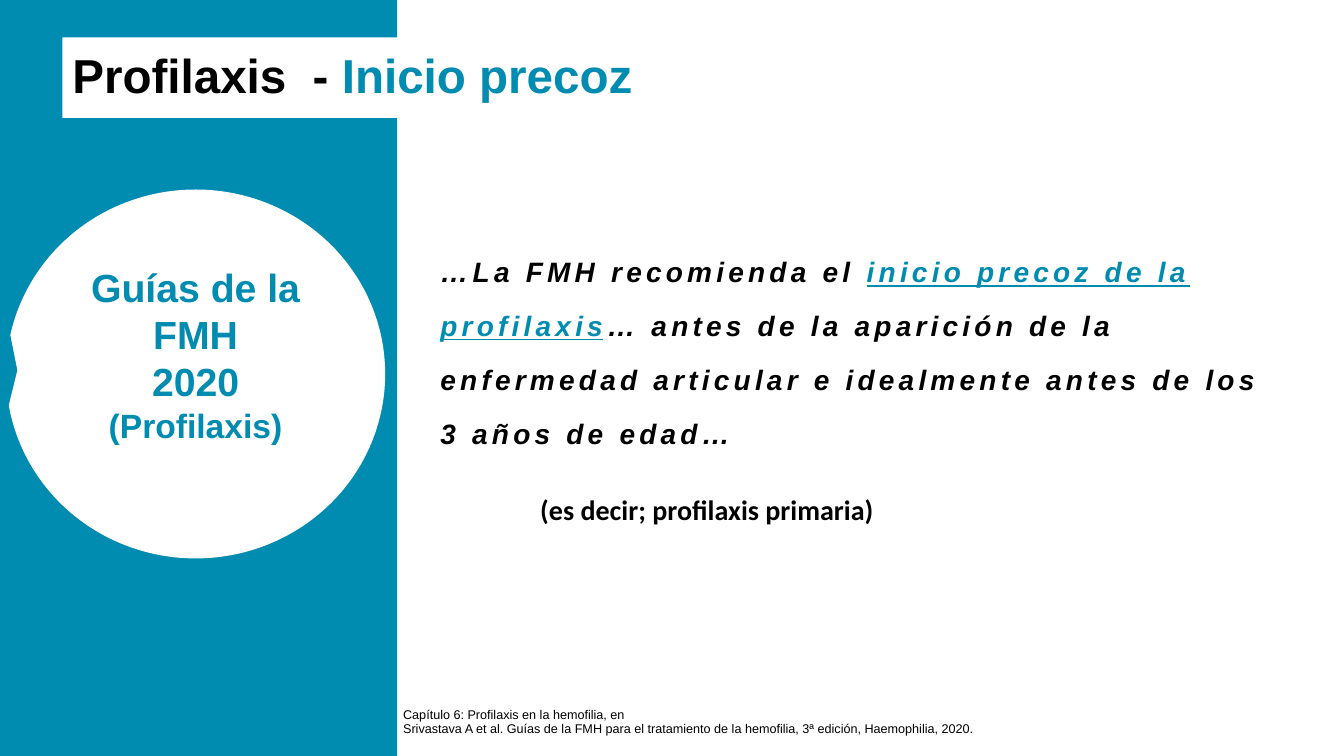
from dataclasses import dataclass

from pptx import Presentation
from pptx import util as u
from pptx.dml.color import RGBColor
from pptx.enum import shapes, text


@dataclass(frozen=True)
class Theme:
    blue: str = "008BB0"
    white: str = "FFFFFF"
    black: str = "000000"
    sans: str = "Arial"
    note_font: str = "Calibri"
    title: int = 34
    heading: int = 28
    subheading: int = 24
    body: int = 20
    source: int = 9


@dataclass(frozen=True)
class Box:
    left: float
    top: float
    width: float
    height: float

    def inner(self, left, top, width, height):
        """Inner box, given in percent of this box."""
        return Box(self.left + self.width * left / 100,
                   self.top + self.height * top / 100,
                   self.width * width / 100, self.height * height / 100)

    def inches(self):
        return [u.Inches(side) for side in
                (self.left, self.top, self.width, self.height)]


THEME = Theme()
SLIDE = Box(0, 0, 13.33, 7.5)


def add_panel(page, box, kind, color):
    panel = page.shapes.add_shape(kind, *box.inches())
    panel.shadow.inherit = False
    panel.fill.solid()
    panel.fill.fore_color.rgb = RGBColor.from_string(color)
    panel.line.fill.background()
    return panel


def write(shape, paragraphs, anchor, align=text.PP_ALIGN.LEFT,
          line_spacing=1.0, bottom_inset=0.05, wrap=True):
    """Each paragraph is a list of (words, size, color, font settings)."""
    frame = shape.text_frame
    frame.word_wrap = wrap
    frame.vertical_anchor = anchor
    frame.margin_bottom = u.Inches(bottom_inset)
    for index, spans in enumerate(paragraphs):
        para = frame.paragraphs[0] if index == 0 else frame.add_paragraph()
        para.alignment = align
        para.line_spacing = line_spacing
        for words, size, color, settings in spans:
            span = para.add_run()
            span.text = words
            span.font.size = u.Pt(size)
            span.font.color.rgb = RGBColor.from_string(color)
            span.font.name = THEME.sans
            for name, value in settings.items():
                setattr(span.font, name, value)


def add_sidebar(page, box):
    # Blue band
    add_panel(page, box, shapes.MSO_SHAPE.RECTANGLE, THEME.blue)
    # Round callout with the guideline name
    callout = add_panel(page, box.inner(1.52, 25.07, 95.43, 48.8),
                        shapes.MSO_SHAPE.OVAL_CALLOUT, THEME.white)
    callout.adjustments[0] = -0.47
    callout.adjustments[1] = -0.01
    lines = [("Guías de la FMH", THEME.heading), ("2020", THEME.heading),
             ("(Profilaxis)", THEME.subheading)]
    write(callout,
          [[(words, size, THEME.blue, {"bold": True})] for words, size in lines],
          text.MSO_ANCHOR.MIDDLE, text.PP_ALIGN.CENTER, bottom_inset=0.44)


def add_title(page, box):
    bar = add_panel(page, box, shapes.MSO_SHAPE.RECTANGLE, THEME.white)
    bold = {"bold": True}
    write(bar, [[("Profilaxis  - ", THEME.title, THEME.black, bold),
                 ("Inicio precoz", THEME.title, THEME.blue, bold)]],
          text.MSO_ANCHOR.MIDDLE, line_spacing=0.9)


def add_message(page, box):
    # Recommendation with wide letter spacing
    quote = add_panel(page, box, shapes.MSO_SHAPE.RECTANGLE, THEME.white)
    style = {"bold": True, "italic": True}
    write(quote, [[
        ("…La FMH recomienda el ", THEME.body, THEME.black, style),
        ("inicio precoz de la profilaxis", THEME.body, THEME.blue,
         {**style, "underline": True}),
        ("… antes de la aparición de la enfermedad articular e idealmente "
         "antes de los 3 años de edad…", THEME.body, THEME.black, style),
    ]], text.MSO_ANCHOR.MIDDLE, line_spacing=1.6, bottom_inset=0.59)
    for span in quote.text_frame.paragraphs[0].runs:
        span.font._element.set("spc", "300")
    # Clarification
    note = page.shapes.add_textbox(*box.inner(11.77, 72.73, 42.09, 8.51).inches())
    write(note, [[("(es decir; profilaxis primaria)", THEME.body, THEME.black,
                   {"bold": True, "name": THEME.note_font})]],
          text.MSO_ANCHOR.TOP, wrap=False)


def add_source(page, box):
    source = page.shapes.add_textbox(*box.inches())
    lines = ["Capítulo 6: Profilaxis en la hemofilia, en",
             "Srivastava A et al. Guías de la FMH para el tratamiento de la "
             "hemofilia, 3ª edición, Haemophilia, 2020."]
    write(source, [[(line, THEME.source, THEME.black, {})] for line in lines],
          text.MSO_ANCHOR.BOTTOM, line_spacing=0.9, bottom_inset=0)


def main():
    deck = Presentation()
    deck.slide_width = u.Inches(SLIDE.width)
    deck.slide_height = u.Inches(SLIDE.height)
    page = deck.slides.add_slide(deck.slide_layouts[6])
    page.background.fill.solid()
    page.background.fill.fore_color.rgb = RGBColor.from_string(THEME.white)

    add_sidebar(page, SLIDE.inner(0, 0, 29.56, 100))
    add_message(page, SLIDE.inner(32.03, 14.4, 63.09, 68.93))
    add_title(page, SLIDE.inner(4.65, 4.93, 95.35, 10.67))
    add_source(page, SLIDE.inner(29.26, 92.4, 51.61, 4.93))
    deck.save("out.pptx")


if __name__ == "__main__":
    main()
